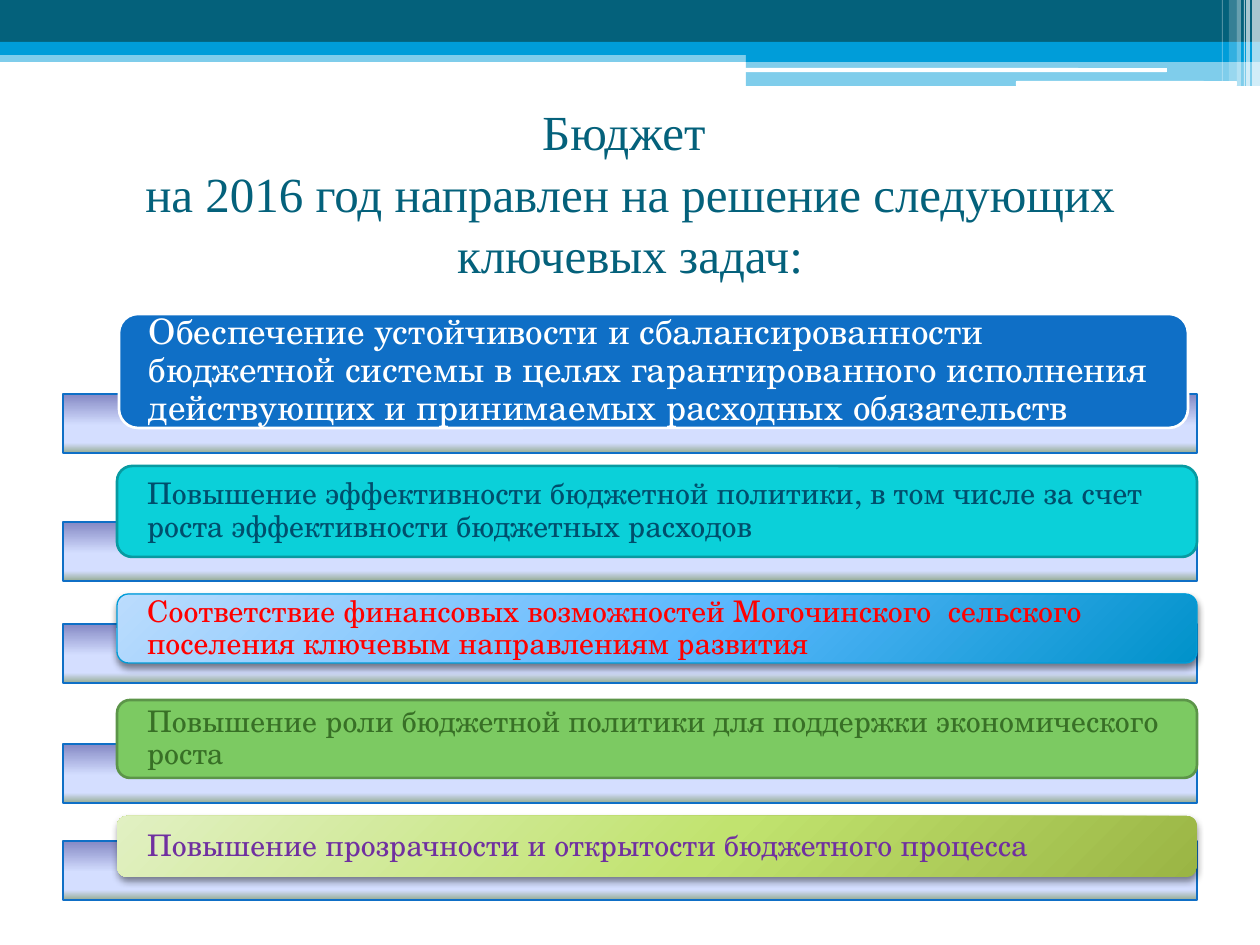
from lxml.etree import SubElement
from pptx import Presentation
from pptx.dml.color import RGBColor
from pptx.enum.shapes import MSO_SHAPE
from pptx.enum.text import MSO_ANCHOR, PP_ALIGN
from pptx.oxml.ns import qn
from pptx.util import Pt

PX = 914400 / 126

COLORS = {
    "white": "FFFFFF", "black": "000000", "teal": "04617B", "sky": "009DD9",
    "blue": "0F6FC6", "cyan": "0BD0D9", "cyan_edge": "089AA1", "navy": "004E6C",
    "red": "FF0000", "green": "7CCA62", "green_edge": "5C9549",
    "forest": "387026", "purple": "7030A0", "violet": "8488C4",
    "lavender": "D4DEFF", "sage": "96AB94", "ice": "BBDCFD",
    "azure": "59B7FD", "ocean": "0092CA", "mist": "E1F0C2",
    "lime": "C1E36F", "olive": "9AB544",
}
PLATE_STOPS = [(0, "violet"), (53, "lavender"), (83, "lavender"), (100, "sage")]
AZURE_STOPS = [(0, "ice"), (55, "azure"), (100, "ocean")]
LIME_STOPS = [(0, "mist"), (55, "lime"), (100, "olive")]

BANDS = [
    (0, 50, 1260, 12, "sky", 50),
    (0, 0, 1260, 43, "teal", 100),
    (0, 42, 1260, 13, "sky", 100),
    (746, 49, 514, 13, "sky", 100),
    (746, 61, 514, 25, "sky", 50),
]
PILLS = [(745, 68, 422, 4), (1016, 81, 221, 5)]
STRIPES = [
    (1252, 8, 86, 65), (1246, 4, 86, 65), (1244, 1, 86, 60),
    (1237, 4, 86, 40), (1229, 8, 81, 20), (1222, 1, 81, 30),
]

TASKS = [
    (394, (119, 314, 1069, 114), "blue", "white", 1.5, "white", 20,
     "Обеспечение устойчивости и сбалансированности бюджетной системы в целях "
     "гарантированного исполнения действующих и принимаемых расходных обязательств"),
    (522, (117, 466, 1080, 91), "cyan", "cyan_edge", 1.5, "navy", 17,
     "Повышение эффективности бюджетной политики, в том числе за счет роста "
     "эффективности бюджетных расходов"),
    (624, (117, 594, 1080, 69), AZURE_STOPS, "sky", 0.75, "red", 17,
     "Соответствие финансовых возможностей Могочинского  сельского поселения "
     "ключевым направлениям развития"),
    (744, (117, 700, 1080, 78), "green", "green_edge", 1.5, "forest", 17,
     "Повышение роли бюджетной политики для поддержки экономического роста"),
    (841, (117, 816, 1080, 61), LIME_STOPS, None, 0, "purple", 17,
     "Повышение прозрачности и открытости бюджетного процесса"),
]


def emu(*lengths):
    return [round(n * PX) for n in lengths]


def rgb(name):
    return RGBColor.from_string(COLORS[name])


def add_color(parent, name, alpha=100):
    clr = SubElement(parent, qn("a:srgbClr"), val=COLORS[name])
    if alpha < 100:
        SubElement(clr, qn("a:alpha"), val=str(alpha * 1000))


def set_gradient(sp, stops, radial):
    sp.fill.gradient()
    grad = sp.element.spPr.find(qn("a:gradFill"))
    for child in list(grad):
        grad.remove(child)
    gs_lst = SubElement(grad, qn("a:gsLst"))
    for pos, name in stops:
        add_color(SubElement(gs_lst, qn("a:gs"), pos=str(pos * 1000)), name)
    if radial:
        focus = SubElement(grad, qn("a:path"), path="circle")
        SubElement(focus, qn("a:fillToRect"),
                   l="-40000", t="-90000", r="140000", b="190000")
    else:
        SubElement(grad, qn("a:lin"), ang="5400000", scaled="0")


def add_shadow(sp):
    effects = sp.element.spPr.find(qn("a:effectLst"))
    shadow = SubElement(effects, qn("a:outerShdw"), blurRad=str(Pt(4)),
                        dist=str(Pt(2)), dir="5400000", rotWithShape="0")
    add_color(shadow, "black", 45)


def add_box(s, kind, box, fill, alpha=100, line=None, width=0, radial=False):
    sp = s.shapes.add_shape(kind, *emu(*box))
    sp.shadow.inherit = False
    if isinstance(fill, list):
        set_gradient(sp, fill, radial)
    else:
        sp.fill.solid()
        sp.fill.fore_color.rgb = rgb(fill)
        if alpha < 100:
            clr = sp.element.spPr.find(qn("a:solidFill"))[0]
            SubElement(clr, qn("a:alpha"), val=str(alpha * 1000))
    if line:
        sp.line.color.rgb = rgb(line)
        sp.line.width = Pt(width)
    else:
        sp.line.fill.background()
    return sp


def add_text(s, box, text, font, size, color, align, spacing, inset):
    tf = s.shapes.add_textbox(*emu(*box)).text_frame
    tf.word_wrap = True
    tf.vertical_anchor = MSO_ANCHOR.MIDDLE
    tf.margin_left = tf.margin_right = emu(inset)[0]
    tf.margin_top = tf.margin_bottom = 0
    p = tf.paragraphs[0]
    p.text = text
    p.alignment = align
    p.line_spacing = spacing
    for r in p.runs:
        r.font.name = font
        r.font.size = Pt(size)
        r.font.color.rgb = rgb(color)


def add_header(s, left, top):
    for x, y, w, h, fill, alpha in BANDS:
        add_box(s, MSO_SHAPE.RECTANGLE, (left + x, top + y, w, h), fill, alpha)
    for x, y, w, h in PILLS:
        add_box(s, MSO_SHAPE.ROUNDED_RECTANGLE, (left + x, top + y, w, h), "white")
    for x, w, h, alpha in STRIPES:
        add_box(s, MSO_SHAPE.RECTANGLE, (left + x, top, w, h), "white", alpha)


def add_title(s, box):
    add_text(s, box, "Бюджет \vна 2016 год направлен на решение следующих ключевых задач:",
             "Times New Roman", 28, "teal", PP_ALIGN.CENTER, 1.05, 13)


def add_tasks(s, left, top, width):
    for plate_y, (x, y, w, h), fill, line, line_w, color, size, text in TASKS:
        plate = (left, top + plate_y - 314, width, 59)
        card = (left + x - 63, top + y - 314, w, h)
        add_box(s, MSO_SHAPE.RECTANGLE, plate, PLATE_STOPS, line="blue", width=1.5)
        sp = add_box(s, MSO_SHAPE.ROUNDED_RECTANGLE, card, fill,
                     line=line, width=line_w, radial=True)
        if isinstance(fill, list):
            add_shadow(sp)
        add_text(s, card, text, "TeX Gyre Schola", size, color, PP_ALIGN.LEFT, 0.9, 30)


def main():
    prs = Presentation()
    prs.slide_width, prs.slide_height = emu(1260, 945)
    s = prs.slides.add_slide(prs.slide_layouts[6])
    add_header(s, 0, 0)
    add_title(s, (63, 98, 1134, 186))
    add_tasks(s, 63, 314, 1134)
    prs.save("out.pptx")


if __name__ == "__main__":
    main()
